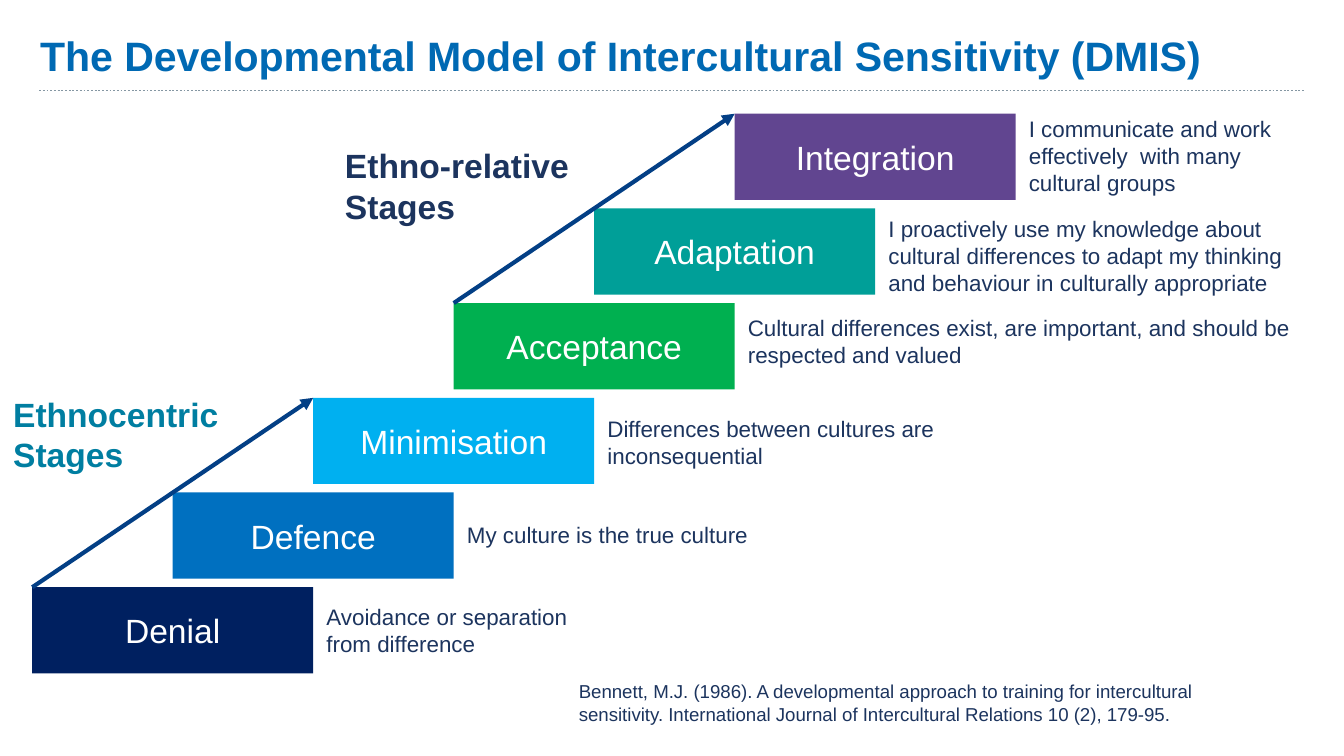
from pptx import Presentation
from pptx.dml.color import RGBColor
from pptx.enum.dml import MSO_LINE
from pptx.enum.shapes import MSO_CONNECTOR, MSO_SHAPE
from pptx.enum.text import MSO_ANCHOR, MSO_AUTO_SIZE, PP_ALIGN
from pptx.oxml.ns import qn
from pptx.util import Cm, Pt
from lxml.etree import SubElement

COLOURS = {
    "title": "0069B3",
    "rule": "8597A3",
    "text": "1C345E",
    "ethnocentric": "007EA1",
    "arrow": "033F85",
    "white": "FFFFFF",
    "denial": "002060",
    "defence": "0070C0",
    "minimisation": "00B0F0",
    "acceptance": "00B050",
    "adaptation": "009F98",
    "integration": "614590",
}

STEP_WIDTH, STEP_HEIGHT = 5.31, 1.63
FIRST_LEFT, FIRST_TOP = 0.61, 11.1
STEP_RIGHT, STEP_UP = STEP_WIDTH / 2, 1.79

STAGES = [
    ("Denial", "Avoidance or separation from difference", 11.28, 6.02, 1.28),
    ("Defence", "My culture is the true culture", 9.73, 5.84, 0.77),
    ("Minimisation", "Differences between cultures are inconsequential", 7.72, 7.11, 1.28),
    ("Acceptance", "Cultural differences exist, are important, and should be "
     "respected and valued", 5.82, 10.97, 1.8),
    ("Adaptation", "I proactively use my knowledge about cultural differences to adapt "
     "my thinking and behaviour in culturally appropriate", 3.94, 8.15, 1.8),
    ("Integration", "I communicate and work effectively  with many cultural groups",
     2.06, 5.89, 1.8),
]


class StaircaseSlide:
    """Style and drawing methods for the current slide."""

    font_name = "Arial"

    def __init__(self, slide):
        self.slide = slide

    def colour(self, name):
        return RGBColor.from_string(COLOURS[name])

    def fill_text(self, text_frame, text, size, colour, bold=False, align=PP_ALIGN.LEFT):
        text_frame.text = text
        for paragraph in text_frame.paragraphs:
            paragraph.alignment = align
            for run in paragraph.runs:
                run.font.name = self.font_name
                run.font.size = Pt(size)
                run.font.bold = bold
                run.font.color.rgb = self.colour(colour)

    def text(self, box, text, size, colour="text", bold=False, wrap=True):
        shape = self.slide.shapes.add_textbox(*map(Cm, box))
        text_frame = shape.text_frame
        text_frame.word_wrap = wrap
        text_frame.auto_size = MSO_AUTO_SIZE.SHAPE_TO_FIT_TEXT
        self.fill_text(text_frame, text, size, colour, bold)
        return text_frame

    def title(self, box, text):
        text_frame = self.text(box, text, 22, "title", bold=True)
        text_frame.auto_size = MSO_AUTO_SIZE.NONE
        text_frame.vertical_anchor = MSO_ANCHOR.BOTTOM
        text_frame.margin_left = 0
        text_frame.paragraphs[0].line_spacing = 0.9

    def block(self, box, text, fill):
        shape = self.slide.shapes.add_shape(MSO_SHAPE.RECTANGLE, *map(Cm, box))
        shape.shadow.inherit = False
        shape.fill.solid()
        shape.fill.fore_color.rgb = self.colour(fill)
        shape.line.fill.background()
        shape.text_frame.vertical_anchor = MSO_ANCHOR.MIDDLE
        self.fill_text(shape.text_frame, text, 18, "white", align=PP_ALIGN.CENTER)

    def line(self, start, end, colour, width):
        connector = self.slide.shapes.add_connector(
            MSO_CONNECTOR.STRAIGHT, *map(Cm, (*start, *end)))
        connector.line.color.rgb = self.colour(colour)
        connector.line.width = Pt(width)
        SubElement(connector._element.spPr, qn("a:effectLst"))
        return connector

    def arrow(self, start, end):
        connector = self.line(start, end, "arrow", 2.25)
        outline = connector._element.spPr.find(qn("a:ln"))
        SubElement(outline, qn("a:tailEnd"), type="triangle")


def step_corner(index):
    return FIRST_LEFT + index * STEP_RIGHT, FIRST_TOP - index * STEP_UP


def main():
    presentation = Presentation()
    presentation.slide_width, presentation.slide_height = Cm(25.4), Cm(14.29)
    page = StaircaseSlide(presentation.slides.add_slide(presentation.slide_layouts[6]))

    rule = page.line((0.74, 1.71), (24.64, 1.71), "rule", 1)
    rule.line.dash_style = MSO_LINE.ROUND_DOT
    page.title((0.76, 0.25, 23.9, 1.4),
               "The Developmental Model of Intercultural Sensitivity (DMIS)")

    for index, (name, description, top, width, height) in enumerate(STAGES):
        left, block_top = step_corner(index)
        page.block((left, block_top, STEP_WIDTH, STEP_HEIGHT), name, name.lower())
        page.text((left + STEP_WIDTH, top, width, height), description, 12)

    page.text((0, 7.32, 4.6, 1.8), "Ethnocentric\nStages", 18, "ethnocentric",
              bold=True, wrap=False)
    page.text((6.27, 2.62, 4.98, 1.8), "Ethno-relative\nStages", 18, bold=True, wrap=False)
    page.text((10.69, 12.73, 12.7, 1.12),
              "Bennett, M.J. (1986). A developmental approach to training for intercultural "
              "sensitivity. International Journal of Intercultural Relations 10 (2), 179-95.", 10)

    for first in (0, 3):
        page.arrow(step_corner(first), step_corner(first + 2))

    presentation.save("out.pptx")


if __name__ == "__main__":
    main()
